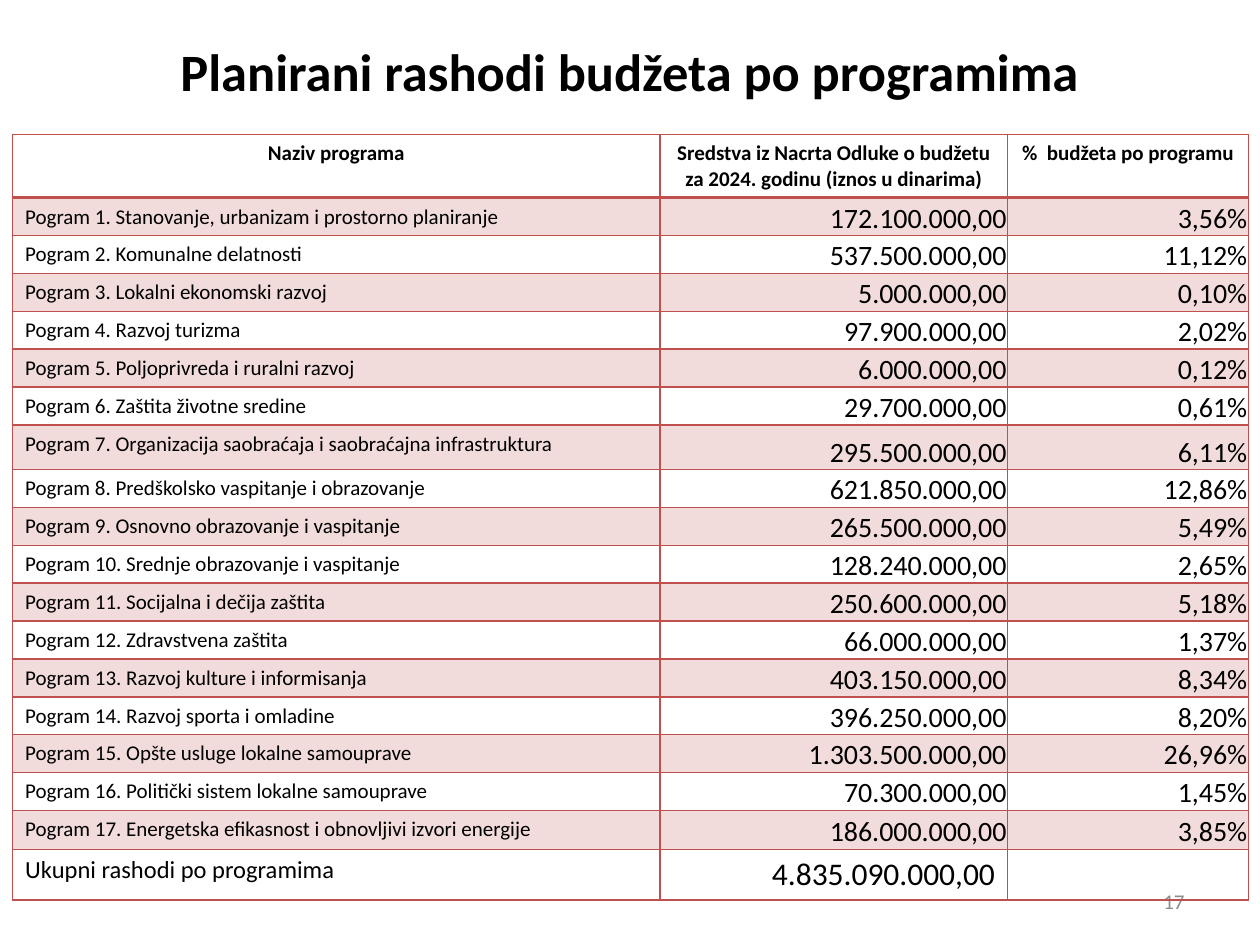
import pptx
import pptx.dml.color
import pptx.enum.text
import pptx.oxml.ns
import pptx.util
from lxml import etree

Pt = pptx.util.Pt
RGBColor = pptx.dml.color.RGBColor
Align = pptx.enum.text.PP_ALIGN
Anchor = pptx.enum.text.MSO_ANCHOR
qn = pptx.oxml.ns.qn

BLACK = RGBColor(0x00, 0x00, 0x00)
GRAY = RGBColor(0x8C, 0x8C, 0x8C)
RED = RGBColor(0xC0, 0x50, 0x4D)

HEADINGS = (
    "Naziv programa",
    "Sredstva iz Nacrta Odluke o budžetu za 2024. godinu (iznos u dinarima)",
    "%  budžeta po programu ",
)
PROGRAMS = [
    ("Stanovanje, urbanizam i prostorno planiranje", "172.100.000,00", "3,56%"),
    ("Komunalne delatnosti", "537.500.000,00", "11,12%"),
    ("Lokalni ekonomski razvoj", "5.000.000,00", "0,10%"),
    ("Razvoj turizma", "97.900.000,00", "2,02%"),
    ("Poljoprivreda i ruralni razvoj", "6.000.000,00", "0,12%"),
    ("Zaštita životne sredine", "29.700.000,00", "0,61%"),
    ("Organizacija saobraćaja i saobraćajna infrastruktura", "295.500.000,00", "6,11%"),
    ("Predškolsko vaspitanje i obrazovanje", "621.850.000,00", "12,86%"),
    ("Osnovno obrazovanje i vaspitanje", "265.500.000,00", "5,49%"),
    ("Srednje obrazovanje i vaspitanje", "128.240.000,00", "2,65%"),
    ("Socijalna i dečija zaštita", "250.600.000,00", "5,18%"),
    ("Zdravstvena zaštita", "66.000.000,00", "1,37%"),
    ("Razvoj kulture i informisanja", "403.150.000,00", "8,34%"),
    ("Razvoj sporta i omladine", "396.250.000,00", "8,20%"),
    ("Opšte usluge lokalne samouprave", "1.303.500.000,00", "26,96%"),
    ("Politički sistem lokalne samouprave", "70.300.000,00", "1,45%"),
    ("Energetska efikasnost i obnovljivi izvori energije", "186.000.000,00", "3,85%"),
]
TOTAL = ("Ukupni rashodi po programima", "4.835.090.000,00", "")

COLUMN_WIDTHS = (370, 198.7, 137.5)
ROW_HEIGHT = 20.9
SPECIAL_HEIGHTS = {0: 35.3, 7: 25.6, 17: 22.3, 18: 28.1}
NUMBER_CELL = {
    "vertical_anchor": Anchor.BOTTOM,
    "margin_left": Pt(0.7),
    "margin_right": Pt(0.7),
    "margin_top": Pt(0.7),
    "margin_bottom": Pt(0),
}


def apply_format(target, values):
    for attribute, value in values.items():
        setattr(target, attribute, value)


def write(frame, text, size, align, bold=False, color=BLACK):
    paragraph = frame.paragraphs[0]
    paragraph.alignment = align
    if not text:
        return
    run = paragraph.add_run()
    run.text = text
    apply_format(run.font, {"name": "Calibri", "size": Pt(size), "bold": bold})
    run.font.color.rgb = color


def add_label(slide, box, text, size, align, bold=False, color=BLACK):
    label = slide.shapes.add_textbox(*map(Pt, box)).text_frame
    apply_format(label, {"word_wrap": True, "vertical_anchor": Anchor.MIDDLE})
    write(label, text, size, align, bold, color)


def set_borders(cell, widths):
    properties = cell._tc.get_or_add_tcPr()
    for side, width in widths.items():
        line = etree.SubElement(properties, qn(f"a:ln{side}"), w=str(Pt(width)))
        solid = etree.SubElement(line, qn("a:solidFill"))
        etree.SubElement(solid, qn("a:srgbClr"), val=str(RED))


def set_fill(cell, tinted):
    if not tinted:
        cell.fill.background()
        return
    cell.fill.solid()
    cell.fill.fore_color.rgb = RED
    tint = cell._tc.tcPr.find(f"{qn('a:solidFill')}/{qn('a:srgbClr')}")
    etree.SubElement(tint, qn("a:alpha"), val="20000")


def add_budget_table(slide, left, top):
    programs = [
        (f"Pogram {number}. {name}", amount, share)
        for number, (name, amount, share) in enumerate(PROGRAMS, 1)
    ]
    rows = [HEADINGS, *programs, TOTAL]
    last = len(rows) - 1
    heights = [SPECIAL_HEIGHTS.get(index, ROW_HEIGHT) for index in range(len(rows))]
    budget = slide.shapes.add_table(
        len(rows), len(COLUMN_WIDTHS),
        Pt(left), Pt(top), Pt(sum(COLUMN_WIDTHS)), Pt(sum(heights)),
    ).table
    apply_format(budget, {"first_row": False, "horz_banding": False})
    for column, width in zip(budget.columns, COLUMN_WIDTHS):
        column.width = Pt(width)
    for row_index, (texts, height) in enumerate(zip(rows, heights)):
        budget.rows[row_index].height = Pt(height)
        heading = row_index == 0
        total = row_index == last
        for column_index, text in enumerate(texts):
            cell = budget.cell(row_index, column_index)
            is_number = column_index > 0 and not heading
            if is_number and not total:
                apply_format(cell, NUMBER_CELL)
            set_borders(cell, {
                "L": 1, "R": 1,
                "T": 2 if row_index == 1 else 1,
                "B": 2 if heading else 1,
            })
            set_fill(cell, row_index % 2 == 1)
            size = (16 if is_number else 12) + (2 if total else 0)
            align = Align.CENTER if heading else Align.RIGHT if is_number else Align.LEFT
            write(cell.text_frame, text, size, align, heading)


def build_budget_slide(presentation):
    slide = presentation.slides.add_slide(presentation.slide_layouts[6])
    add_label(slide, (53.3, 9.4, 613.4, 61.2),
              "Planirani rashodi budžeta po programima", 30, Align.CENTER, bold=True)
    add_label(slide, (516, 500.5, 168, 28.75), "17", 12, Align.RIGHT, color=GRAY)
    add_budget_table(slide, 7.2, 77)


def main():
    presentation = pptx.Presentation()
    apply_format(presentation, {"slide_width": Pt(720), "slide_height": Pt(540)})
    build_budget_slide(presentation)
    presentation.save("out.pptx")


if __name__ == "__main__":
    main()
